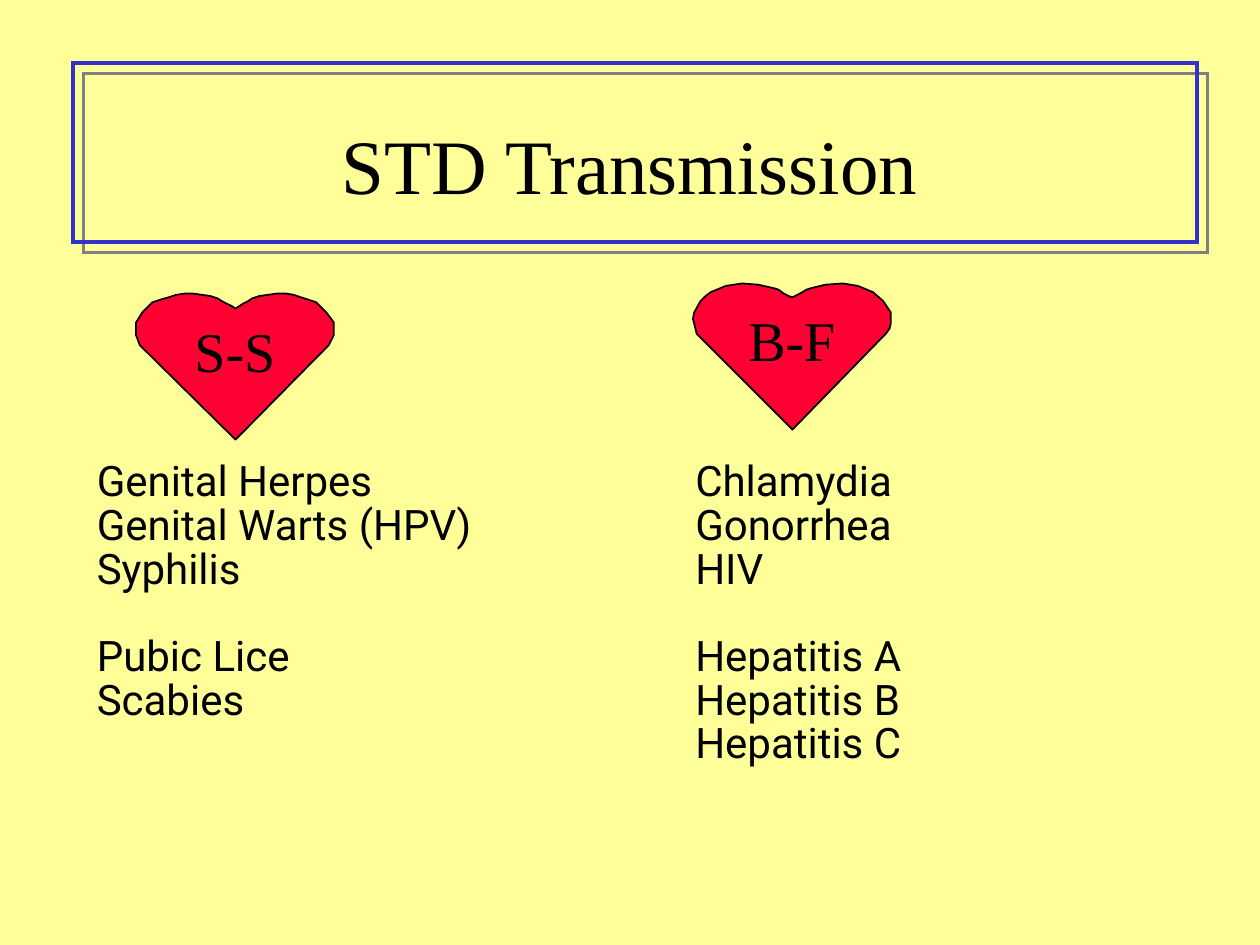
from lxml import etree
from pptx import Presentation
from pptx.dml.color import RGBColor
from pptx.enum.shapes import MSO_SHAPE as Shape
from pptx.enum.text import MSO_ANCHOR as Anchor, PP_ALIGN as Align
from pptx.oxml.ns import qn
from pptx.util import Inches, Pt

TITLE = "STD Transmission"
SERIF, SANS = "Times New Roman", "Roboto"
BLACK, BLUE, RED, GRAY, YELLOW = "000000", "3333CC", "FF0033", "808080", "FFFF99"
LINE_GAP, GROUP_GAP = 4.8, 29.7

COLUMNS = [
    (0.67, [["Genital Herpes", "Genital Warts (HPV)", "Syphilis"],
            ["Pubic Lice", "Scabies"]]),
    (5.42, [["Chlamydia", "Gonorrhea", "HIV"],
            ["Hepatitis A", "Hepatitis B", "Hepatitis C"]]),
]
HEARTS = [
    ("B-F", (5.92, 2.42), [
        (6.29, 2.36), (6.26, 2.35), (6.22, 2.33), (6.18, 2.3), (6.15, 2.29),
        (6.02, 2.26), (5.89, 2.25), (5.76, 2.27), (5.64, 2.32), (5.6, 2.35),
        (5.56, 2.39), (5.51, 2.48), (5.5, 2.53), (5.51, 2.57), (5.53, 2.65),
        (6.29, 3.41), (7.03, 2.65), (7.06, 2.61), (7.07, 2.57), (7.07, 2.48),
        (7.01, 2.39), (6.93, 2.32), (6.81, 2.27), (6.69, 2.25), (6.55, 2.26),
        (6.43, 2.29), (6.4, 2.3), (6.35, 2.33), (6.31, 2.35)]),
    ("S-S", (1.5, 2.5), [
        (1.87, 2.45), (1.84, 2.43), (1.8, 2.41), (1.76, 2.39), (1.73, 2.37),
        (1.67, 2.35), (1.6, 2.34), (1.53, 2.33), (1.47, 2.33), (1.4, 2.34),
        (1.34, 2.36), (1.27, 2.38), (1.21, 2.4), (1.13, 2.48), (1.08, 2.56),
        (1.08, 2.66), (1.11, 2.74), (1.87, 3.49), (2.61, 2.74), (2.63, 2.7),
        (2.65, 2.66), (2.65, 2.56), (2.59, 2.48), (2.51, 2.4), (2.45, 2.38),
        (2.39, 2.36), (2.33, 2.34), (2.27, 2.33), (2.2, 2.33), (2.13, 2.34),
        (2.06, 2.35), (2, 2.37), (1.97, 2.39), (1.93, 2.41), (1.9, 2.43)]),
]


def color(value):
    return RGBColor.from_string(value)


def add_text(shapes, box, groups, size, font, align=Align.LEFT,
             anchor=Anchor.TOP, wrap=True, margin=0.1, spacing=None, hanging=0):
    shape = shapes.add_textbox(*map(Inches, box))
    frame = shape.text_frame
    frame.word_wrap = wrap
    frame.vertical_anchor = anchor
    frame.margin_left = frame.margin_right = Inches(margin)
    lines = [(text, number > 0 and index == 0)
             for number, group in enumerate(groups)
             for index, text in enumerate(group)]
    for index, (text, starts_group) in enumerate(lines):
        paragraph = frame.add_paragraph() if index else frame.paragraphs[0]
        paragraph.alignment = align
        if spacing:
            paragraph.line_spacing = spacing
            paragraph.space_before = Pt(GROUP_GAP if starts_group else LINE_GAP)
        if hanging:
            properties = paragraph._p.get_or_add_pPr()
            properties.set("marL", str(Inches(hanging)))
            properties.set("indent", str(-Inches(hanging)))
        run = paragraph.add_run()
        run.text = text
        run.font.size = Pt(size)
        run.font.name = font
        run.font.color.rgb = color(BLACK)


def add_shadow(shape, value, distance, angle):
    effects = shape._element.spPr.find(qn("a:effectLst"))
    shadow = etree.SubElement(effects, qn("a:outerShdw"), dist=str(Pt(distance)),
                              dir=str(angle * 60000), algn="ctr", rotWithShape="0")
    etree.SubElement(shadow, qn("a:srgbClr"), val=value)


def add_heart(shapes, label, corner, points):
    group = shapes.add_group_shape()
    start, *others = [(Inches(x), Inches(y)) for x, y in points]
    builder = group.shapes.build_freeform(*start)
    builder.add_line_segments(others, close=True)
    heart = builder.convert_to_shape()
    heart.shadow.inherit = False
    heart.fill.solid()
    heart.fill.fore_color.rgb = color(RED)
    heart.line.color.rgb = color(BLACK)
    heart.line.width = Pt(1)
    add_text(group.shapes, (*corner, 0.73, 0.55), [[label]], 32, SERIF,
             align=Align.CENTER, anchor=Anchor.MIDDLE, wrap=False, margin=0)


presentation = Presentation()
presentation.slide_width, presentation.slide_height = Inches(10), Inches(7.5)
slide = presentation.slides.add_slide(presentation.slide_layouts[6])
slide.background.fill.solid()
slide.background.fill.fore_color.rgb = color(YELLOW)

add_text(slide.shapes, (0.75, 0.67, 8.5, 1.25), [[TITLE]], 44, SERIF,
         align=Align.CENTER, anchor=Anchor.MIDDLE)

title_frame = slide.shapes.add_shape(
    Shape.RECTANGLE, Inches(0.58), Inches(0.5), Inches(8.92), Inches(1.42))
title_frame.shadow.inherit = False
title_frame.fill.background()
title_frame.line.color.rgb = color(BLUE)
title_frame.line.width = Pt(2)
outline = title_frame._element.spPr.find(qn("a:ln"))
etree.SubElement(outline, qn("a:miter"), lim="800000")
add_shadow(title_frame, GRAY, 8.5, 45)

for left, groups in COLUMNS:
    add_text(slide.shapes, (left, 3.67, 4.17, 3.25), groups, 24, SANS,
             spacing=0.7, hanging=0.38)

for label, corner, points in HEARTS:
    add_heart(slide.shapes, label, corner, points)

presentation.save("out.pptx")
